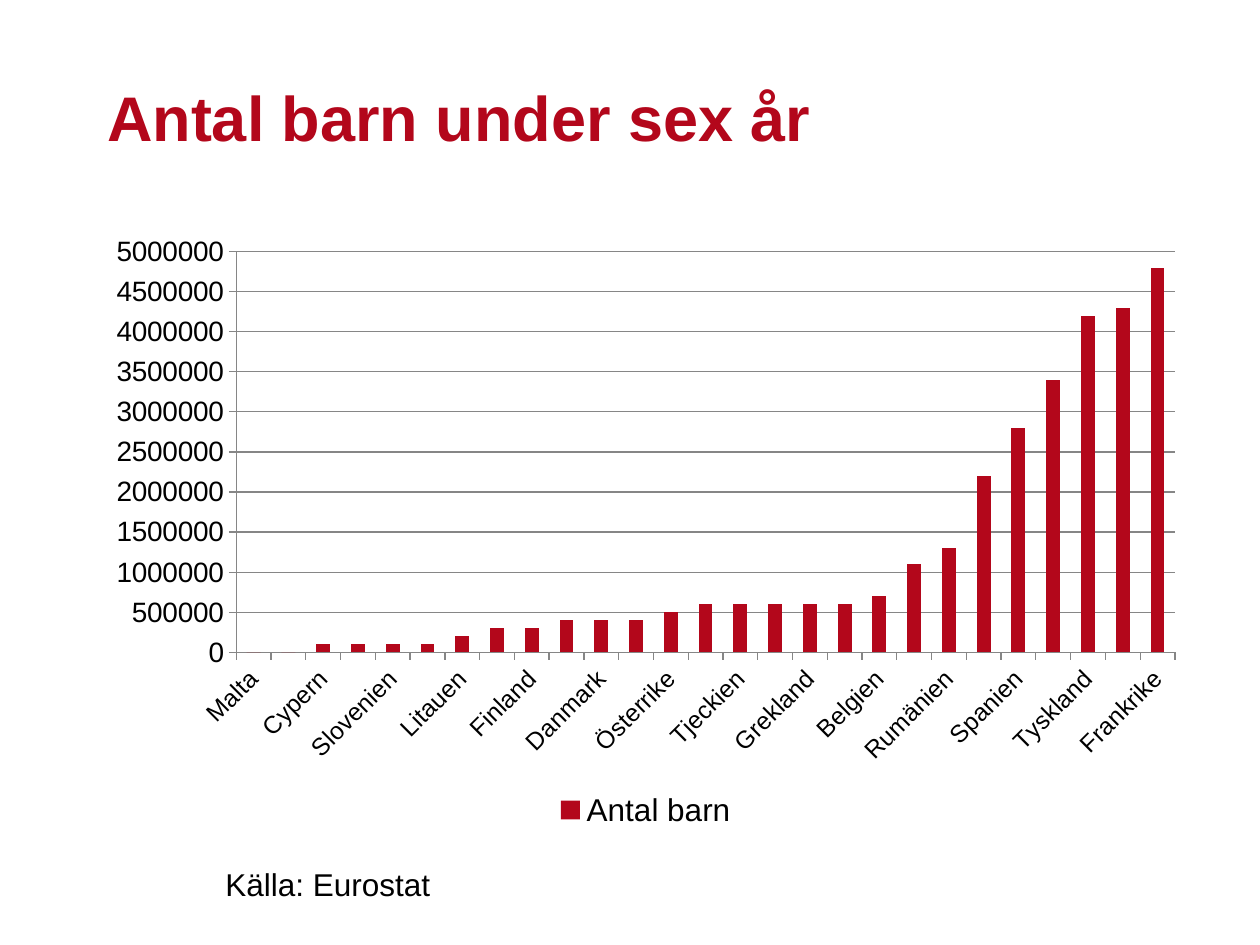
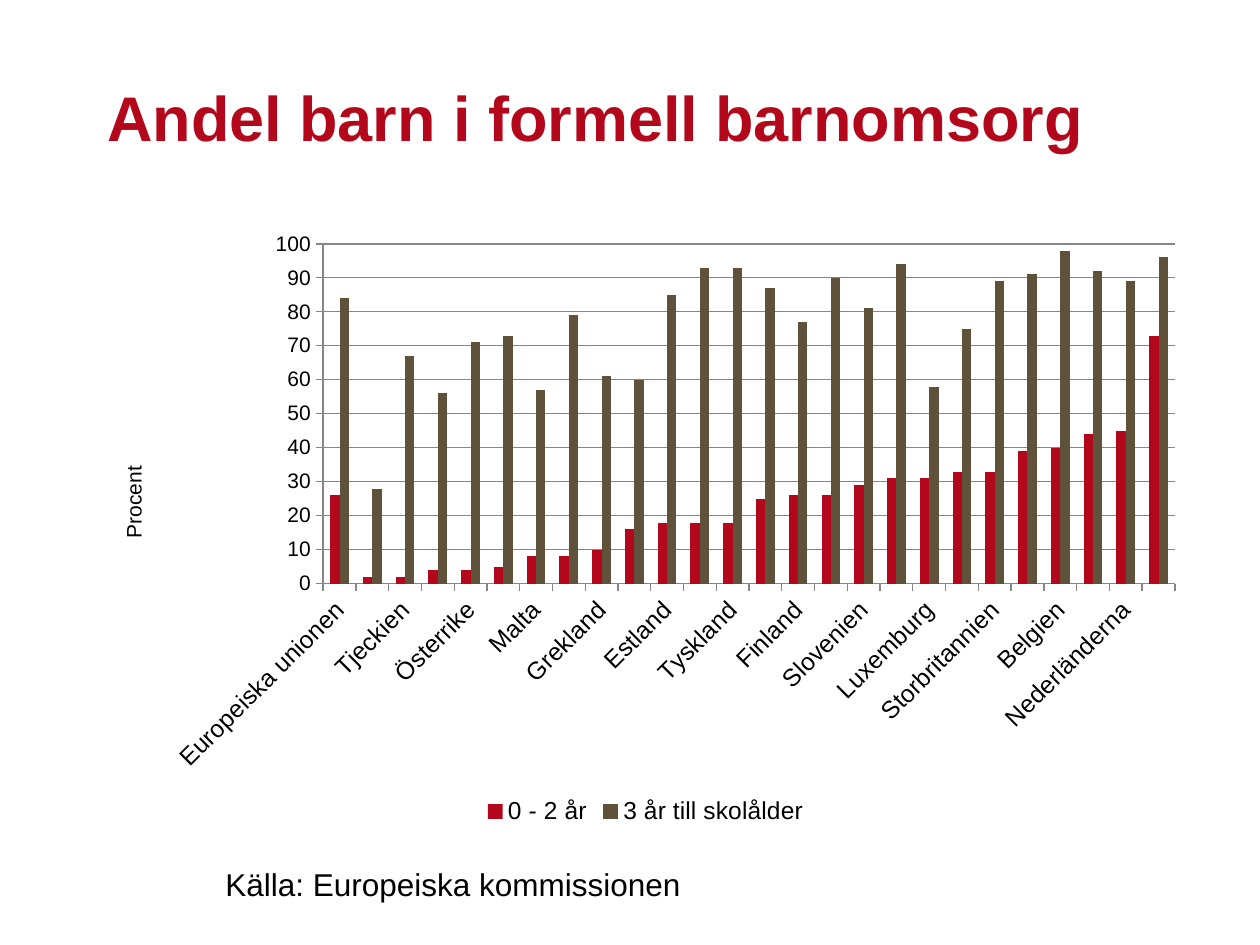
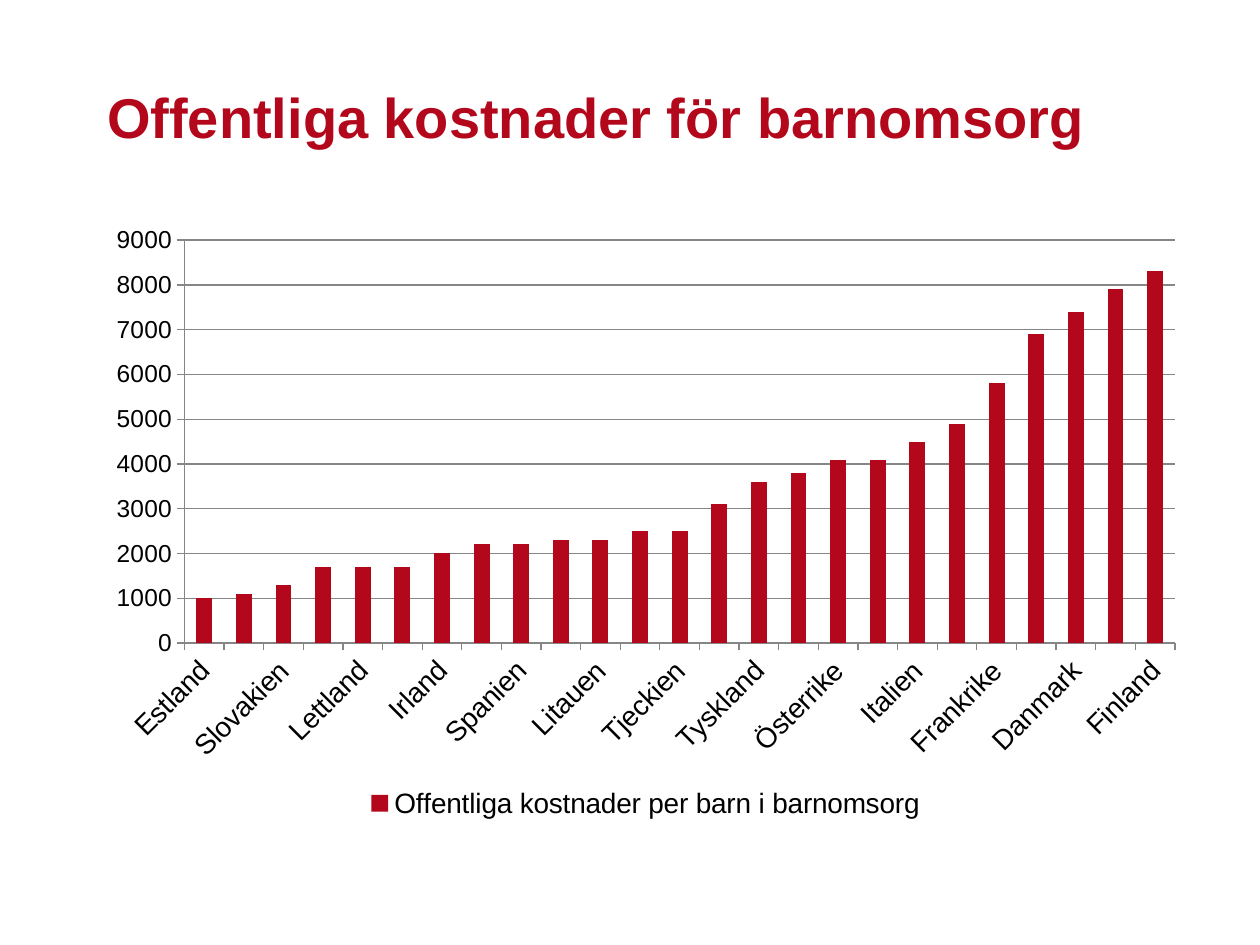
from dataclasses import dataclass

from pptx import Presentation
from pptx.chart.data import CategoryChartData
from pptx.dml.color import RGBColor
from pptx.enum.chart import XL_CHART_TYPE as ChartType
from pptx.enum.chart import XL_LEGEND_POSITION as LegendPosition
from pptx.enum.chart import XL_TICK_MARK as TickMark
from pptx.enum.text import MSO_ANCHOR as Anchor
from pptx.enum.text import MSO_AUTO_SIZE as AutoSize
from pptx.enum.text import PP_ALIGN as Align
from pptx.util import Inches, Pt


@dataclass(frozen=True)
class Theme:
    font: str = "Arial"
    text: RGBColor = RGBColor.from_string("000000")
    title: RGBColor = RGBColor.from_string("B3071B")
    grid: RGBColor = RGBColor.from_string("868686")
    series: tuple = (RGBColor.from_string("B3071B"), RGBColor.from_string("60513A"))
    chart_size: int = 10
    source_size: int = 18


THEME = Theme()

# Content: sizes are in points, chart_top in inches, axis is (maximum, step)
SLIDES = [
    dict(
        title="Antal barn under sex år", title_size=36,
        source="Källa: Eurostat",
        chart_top=1.78, country_size=14, value_size=16, legend_size=18,
        axis=(5000000, 500000), number_format="#0", axis_title=None,
        countries=[
            "Malta", "Luxemburg", "Cypern", "Estland", "Slovenien", "Lettland",
            "Litauen", "Slovakien", "Finland", "Irland", "Danmark", "Bulgarien",
            "Österrike", "Ungern", "Tjeckien", "Sverige", "Grekland", "Portugal",
            "Belgien", "Nederländerna", "Rumänien", "Polen", "Spanien", "Italien",
            "Tyskland", "Storbritannien", "Frankrike"],
        series={"Antal barn": [
            0, 0, 100000, 100000, 100000, 100000, 200000, 300000, 300000,
            400000, 400000, 400000, 500000, 600000, 600000, 600000, 600000,
            600000, 700000, 1100000, 1300000, 2200000, 2800000, 3400000,
            4200000, 4300000, 4800000]},
    ),
    dict(
        title="Andel barn i formell barnomsorg", title_size=36,
        source="Källa: Europeiska kommissionen",
        chart_top=1.75, country_size=14, value_size=12, legend_size=14,
        axis=(100, 10), number_format="General", axis_title=("Procent", 12),
        countries=[
            "Europeiska unionen", "Polen", "Tjeckien", "Litauen", "Österrike",
            "Slovakien", "Malta", "Ungern", "Grekland", "Lettland", "Estland",
            "Irland", "Tyskland", "Cypern", "Finland", "Italien", "Slovenien",
            "Frankrike", "Luxemburg", "Portugal", "Storbritannien", "Spanien",
            "Belgien", "Sverige", "Nederländerna", "Danmark"],
        series={
            "0 - 2 år": [
                26, 2, 2, 4, 4, 5, 8, 8, 10, 16, 18, 18, 18, 25, 26, 26, 29,
                31, 31, 33, 33, 39, 40, 44, 45, 73],
            "3 år till skolålder": [
                84, 28, 67, 56, 71, 73, 57, 79, 61, 60, 85, 93, 93, 87, 77, 90,
                81, 94, 58, 75, 89, 91, 98, 92, 89, 96]},
    ),
    dict(
        title="Offentliga kostnader för barnomsorg", title_size=32,
        source=None,
        chart_top=1.7, country_size=16, value_size=14, legend_size=16,
        axis=(9000, 1000), number_format="General", axis_title=None,
        countries=[
            "Estland", "Grekland", "Slovakien", "Cypern", "Lettland", "Portugal",
            "Irland", "Polen", "Spanien", "Slovenien", "Litauen", "Ungern",
            "Tjeckien", "Nederländerna", "Tyskland", "Malta", "Österrike",
            "Storbritannien", "Italien", "Belgien", "Frankrike", "Sverige",
            "Danmark", "Luxemburg", "Finland"],
        series={"Offentliga kostnader per barn i barnomsorg": [
            1000, 1100, 1300, 1700, 1700, 1700, 2000, 2200, 2200, 2300, 2300,
            2500, 2500, 3100, 3600, 3800, 4100, 4100, 4500, 4900, 5800, 6900,
            7400, 7900, 8300]},
    ),
]

# Shared layout, in inches
LEFT, WIDTH = 0.75, 8.75
TITLE_TOP, TITLE_HEIGHT = 0.3, 1.25
CHART_HEIGHT = 4.84
SOURCE_BOX = (1.69, 6.82, 4.88, 0.4)


def set_font(font, size, color=THEME.text, bold=False):
    font.name = THEME.font
    font.size = Pt(size)
    font.bold = bold
    font.color.rgb = color


def add_title(slide, text, size):
    title = slide.shapes.title
    title.left, title.top = Inches(LEFT), Inches(TITLE_TOP)
    title.width, title.height = Inches(WIDTH), Inches(TITLE_HEIGHT)
    frame = title.text_frame
    frame.text = text
    frame.auto_size = AutoSize.NONE
    frame.vertical_anchor = Anchor.MIDDLE
    heading = frame.paragraphs[0]
    heading.alignment = Align.LEFT
    set_font(heading.font, size, THEME.title, bold=True)


def add_source(slide, text):
    frame = slide.shapes.add_textbox(*map(Inches, SOURCE_BOX)).text_frame
    frame.word_wrap = True
    frame.auto_size = AutoSize.SHAPE_TO_FIT_TEXT
    frame.text = text
    set_font(frame.paragraphs[0].font, THEME.source_size)


def style_axis(axis, label_size):
    axis.major_tick_mark = TickMark.OUTSIDE
    axis.minor_tick_mark = TickMark.NONE
    axis.format.line.color.rgb = THEME.grid
    set_font(axis.tick_labels.font, label_size)


def add_columns(slide, content):
    data = CategoryChartData()
    data.categories = content["countries"]
    for name, values in content["series"].items():
        data.add_series(name, values)
    chart = slide.shapes.add_chart(
        ChartType.COLUMN_CLUSTERED, Inches(LEFT), Inches(content["chart_top"]),
        Inches(WIDTH), Inches(CHART_HEIGHT), data).chart
    chart.has_title = False
    set_font(chart.font, THEME.chart_size)

    # Columns
    plot = chart.plots[0]
    plot.vary_by_categories = False
    plot.gap_width, plot.overlap = 150, 0
    for series, color in zip(plot.series, THEME.series):
        series.format.fill.solid()
        series.format.fill.fore_color.rgb = color

    # Axes, with slanted country names
    countries, values = chart.category_axis, chart.value_axis
    style_axis(countries, content["country_size"])
    countries._element.txPr.bodyPr.set("rot", "-2700000")
    style_axis(values, content["value_size"])
    values.minimum_scale = 0
    values.maximum_scale, values.major_unit = content["axis"]
    values.tick_labels.number_format = content["number_format"]
    values.tick_labels.number_format_is_linked = False
    values.has_major_gridlines = True
    values.major_gridlines.format.line.color.rgb = THEME.grid
    if content["axis_title"]:
        unit, size = content["axis_title"]
        frame = values.axis_title.text_frame
        frame.text = unit
        set_font(frame.paragraphs[0].font, size)

    # Legend
    chart.has_legend = True
    chart.legend.position = LegendPosition.BOTTOM
    chart.legend.include_in_layout = False
    set_font(chart.legend.font, content["legend_size"])


def main():
    deck = Presentation()
    deck.slide_width, deck.slide_height = Inches(10), Inches(7.5)
    title_only = deck.slide_layouts[5]
    for content in SLIDES:
        slide = deck.slides.add_slide(title_only)
        add_title(slide, content["title"], content["title_size"])
        add_columns(slide, content)
        if content["source"]:
            add_source(slide, content["source"])
    deck.save("out.pptx")


if __name__ == "__main__":
    main()
